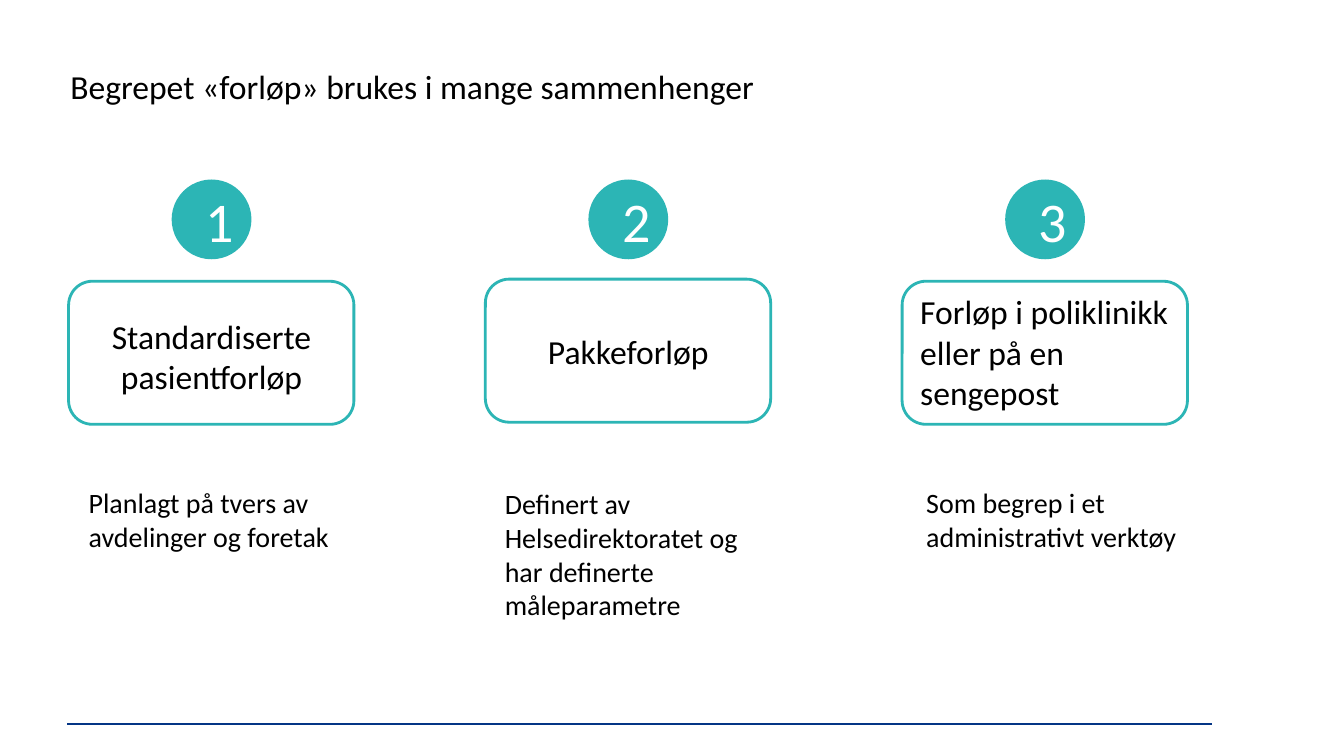
"""Build the slide about the three uses of the term «forløp»."""
from lxml import etree
from pptx import Presentation
from pptx import util as u
from pptx.dml.color import RGBColor
from pptx.enum import shapes, text
from pptx.oxml.ns import qn


def color(hex_code):
    return RGBColor.from_string(hex_code)


def add_text(parent, words, left, top, width, height, size=24, ink="000000", align=text.PP_ALIGN.LEFT):
    box = parent.shapes.add_textbox(u.Pt(left), u.Pt(top), u.Pt(width), u.Pt(height))
    box.text_frame.word_wrap = True
    box.text_frame.auto_size = text.MSO_AUTO_SIZE.SHAPE_TO_FIT_TEXT
    paragraph = box.text_frame.paragraphs[0]
    paragraph.alignment = align
    run = paragraph.add_run()
    run.text = words
    run.font.name = "Calibri"
    run.font.size = u.Pt(size)
    run.font.color.rgb = color(ink)


TEAL = "2CB5B5"
CENTER = text.PP_ALIGN.CENTER
LEFT = text.PP_ALIGN.LEFT
FIRST_LEFT, PITCH = 49, 297.7

presentation = Presentation()
presentation.slide_width = u.Pt(960)
presentation.slide_height = u.Pt(540)
slide = presentation.slides.add_slide(presentation.slide_layouts[6])

footer_rule = slide.shapes.add_connector(
    shapes.MSO_CONNECTOR.STRAIGHT, u.Pt(48.2), u.Pt(517), u.Pt(865.4), u.Pt(517))
footer_rule.line.color.rgb = color("043585")
footer_rule.line.width = u.Pt(1.25)
etree.SubElement(footer_rule._element.spPr, qn("a:effectLst"))

add_text(slide, "Begrepet «forløp» brukes i mange sammenhenger", 43.2, 43.2, 810.7, 36)

meanings = [
    ("Standardiserte pasientforløp", (20, 221.8, 164.2, 38), CENTER, 200.9,
     "Planlagt på tvers av avdelinger og foretak", (7.2, 343.4, 189.4, 55.7)),
    ("Pakkeforløp", (20, 232.6, 164.2, 21), CENTER, 199.4,
     "Definert av Helsedirektoratet og har definerte måleparametre", (6.8, 344.2, 189.4, 104.2)),
    ("Forløp i poliklinikk eller på en sengepost", (5.8, 204.5, 198, 94.4), LEFT, 200.9,
     "Som begrep i et administrativt verktøy", (10.1, 343.4, 228.2, 55.7)),
]

for index, (term, term_area, term_align, frame_top, detail, detail_area) in enumerate(meanings):
    left = FIRST_LEFT + index * PITCH
    group = slide.shapes.add_group_shape()

    badge = group.shapes.add_shape(
        shapes.MSO_SHAPE.OVAL, u.Pt(left + 73.6), u.Pt(128.2), u.Pt(57), u.Pt(57))
    badge.shadow.inherit = False
    badge.fill.solid()
    badge.fill.fore_color.rgb = color(TEAL)
    badge.line.fill.background()
    add_text(group, str(index + 1), left + 90.6, 129.6, 22.3, 55.7, size=40, ink="FFFFFF", align=CENTER)

    frame = group.shapes.add_shape(
        shapes.MSO_SHAPE.ROUNDED_RECTANGLE, u.Pt(left), u.Pt(frame_top), u.Pt(203.8), u.Pt(102.2))
    frame.shadow.inherit = False
    frame.fill.background()
    frame.line.color.rgb = color(TEAL)
    frame.line.width = u.Pt(2)

    add_text(group, term, left + term_area[0], *term_area[1:], align=term_align)
    add_text(slide, detail, left + detail_area[0], *detail_area[1:], size=20)

presentation.save("out.pptx")
